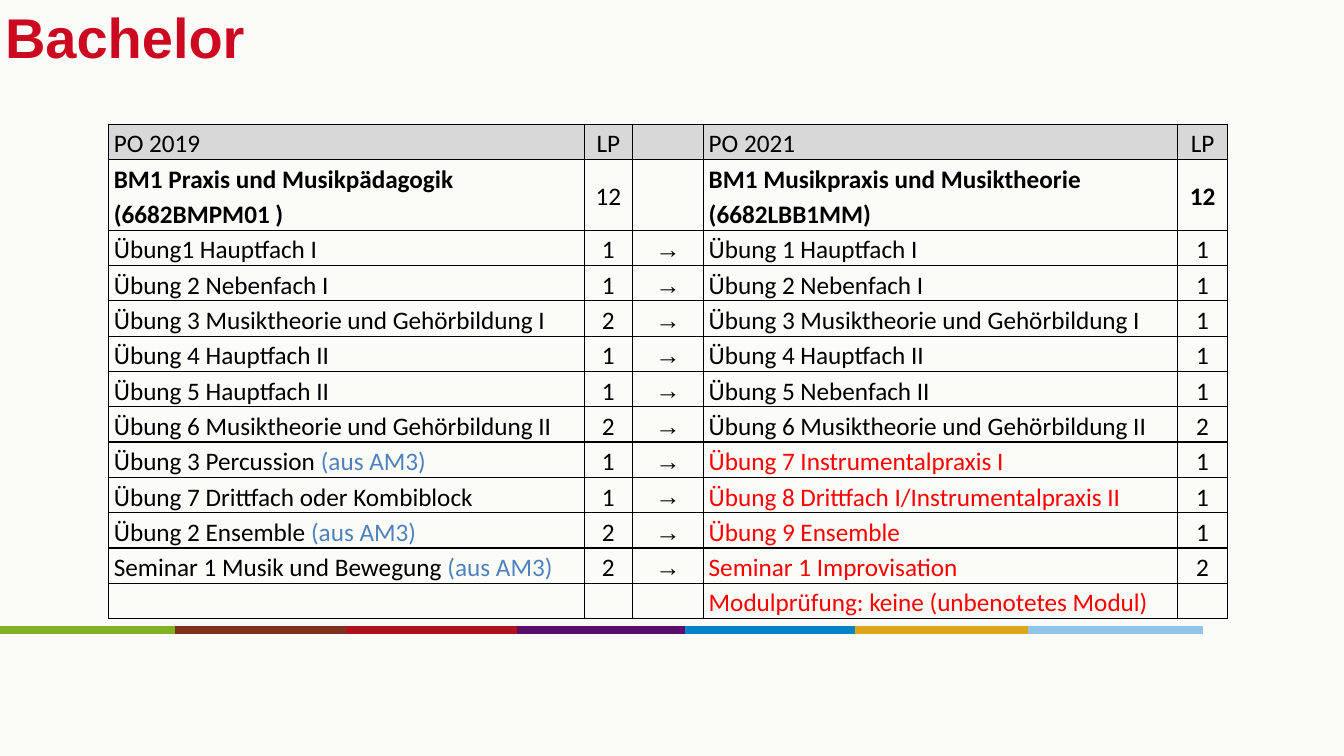
from typing import NamedTuple

from lxml.etree import SubElement
from pptx import Presentation
from pptx.dml.color import RGBColor
from pptx.enum.shapes import MSO_CONNECTOR
from pptx.enum.text import MSO_ANCHOR, PP_ALIGN
from pptx.oxml.ns import qn
from pptx.util import Cm, Pt

COLORS = {
    "background": "FBFCF8", "title": "CD0921", "text": "000000",
    "header": "D8D8D8", "changed": "FF0000", "origin": "4F81BD",
    "green": "83AF23", "brown": "7D321D", "red": "AF111D", "purple": "590F68",
    "blue": "0082C6", "gold": "DBA619", "sky": "91C4EA",
}


class Stripe(NamedTuple):
    left: float
    color: str


class Course(NamedTuple):
    old: str
    old_points: str
    arrow: str
    new: str
    new_points: str
    origin: str = ""
    new_color: str = "text"


STRIPE_TOP, STRIPE_WIDTH = 15.88, 4.4
STRIPES = [
    Stripe(0, "green"), Stripe(4.42, "brown"), Stripe(8.71, "red"),
    Stripe(13.03, "purple"), Stripe(17.27, "blue"), Stripe(21.54, "gold"),
    Stripe(25.91, "sky"),
]

AM3 = "(aus AM3)"
COURSES = [
    Course("PO 2019", "LP", "", "PO 2021", "LP"),
    Course("BM1 Praxis und Musikpädagogik (6682BMPM01 )", "12", "",
           "BM1 Musikpraxis und Musiktheorie (6682LBB1MM)", "12"),
    Course("Übung1 Hauptfach I", "1", "→", "Übung 1 Hauptfach I", "1"),
    Course("Übung 2 Nebenfach I", "1", "→", "Übung 2 Nebenfach I", "1"),
    Course("Übung 3 Musiktheorie und Gehörbildung I", "2", "→",
           "Übung 3 Musiktheorie und Gehörbildung I", "1"),
    Course("Übung 4 Hauptfach II", "1", "→", "Übung 4 Hauptfach II", "1"),
    Course("Übung 5 Hauptfach II", "1", "→", "Übung 5 Nebenfach II", "1"),
    Course("Übung 6 Musiktheorie und Gehörbildung II", "2", "→",
           "Übung 6 Musiktheorie und Gehörbildung II", "2"),
    Course("Übung 3 Percussion ", "1", "→",
           "Übung 7 Instrumentalpraxis I", "1", AM3, "changed"),
    Course("Übung 7 Drittfach oder Kombiblock", "1", "→",
           "Übung 8 Drittfach I/Instrumentalpraxis II", "1", "", "changed"),
    Course("Übung 2 Ensemble ", "2", "→", "Übung 9 Ensemble", "1", AM3, "changed"),
    Course("Seminar 1 Musik und Bewegung ", "2", "→",
           "Seminar 1 Improvisation", "2", AM3, "changed"),
    Course("", "", "", "Modulprüfung: keine (unbenotetes Modul)", "", "", "changed"),
]
HEADER_ROW, MODULE_ROW = 0, 1
OLD, OLD_POINTS, ARROW, NEW, NEW_POINTS = range(5)
COLUMN_WIDTHS = [11.99, 1.2, 1.8, 11.94, 1.27]
ROW_HEIGHT = 0.89


def rgb(name: str) -> RGBColor:
    return RGBColor.from_string(COLORS[name])


def style_font(font, face: str, size: float, color: str, bold: bool = False) -> None:
    font.name, font.size, font.bold = face, Pt(size), bold
    font.color.rgb = rgb(color)


def draw_stripe(slide, stripe: Stripe) -> None:
    line = slide.shapes.add_connector(
        MSO_CONNECTOR.STRAIGHT, Cm(stripe.left), Cm(STRIPE_TOP),
        Cm(stripe.left + STRIPE_WIDTH), Cm(STRIPE_TOP))
    line.line.color.rgb = rgb(stripe.color)
    line.line.width = Pt(5.5)
    SubElement(line.element.spPr, qn("a:effectLst"))


def draw_title(slide, wording: str) -> None:
    title = slide.shapes.add_textbox(Cm(0), Cm(-0.69), Cm(28.78), Cm(3.18))
    frame = title.text_frame
    frame.word_wrap = True
    frame.vertical_anchor = MSO_ANCHOR.MIDDLE
    frame.margin_left = frame.margin_right = Cm(0.13)
    frame.margin_top = frame.margin_bottom = Cm(0.13)
    frame.text = wording
    style_font(frame.paragraphs[0].font, "Arial", 40, "title", True)


def add_borders(cell) -> None:
    properties = cell._tc.get_or_add_tcPr()
    for side in ("lnL", "lnR", "lnT", "lnB"):
        border = SubElement(properties, qn(f"a:{side}"), w=str(Pt(1)))
        fill = SubElement(border, qn("a:solidFill"))
        SubElement(fill, qn("a:srgbClr"), val=COLORS["text"])


def fill_cell(cell, course: Course, row: int, column: int) -> None:
    add_borders(cell)
    if row == HEADER_ROW:
        cell.fill.solid()
        cell.fill.fore_color.rgb = rgb("header")
    else:
        cell.fill.background()
    cell.vertical_anchor = MSO_ANCHOR.MIDDLE
    cell.margin_left = cell.margin_right = Cm(0.13)
    cell.margin_top = cell.margin_bottom = Cm(0)

    paragraph = cell.text_frame.paragraphs[0]
    paragraph.line_spacing = 1.15
    if column not in (OLD, NEW):
        paragraph.alignment = PP_ALIGN.CENTER
    style_font(paragraph.font, "Arial" if column == ARROW else "Calibri", 18,
               course.new_color if column == NEW else "text",
               row == MODULE_ROW and column != OLD_POINTS)
    if course[column]:
        paragraph.add_run().text = course[column]
    if column == OLD and course.origin:
        origin = paragraph.add_run()
        origin.text = course.origin
        origin.font.color.rgb = rgb("origin")


def draw_courses(slide, courses: list[Course]) -> None:
    table = slide.shapes.add_table(
        len(courses), len(COLUMN_WIDTHS), Cm(2.74), Cm(3.13),
        Cm(sum(COLUMN_WIDTHS)), Cm(ROW_HEIGHT * (len(courses) + 1))).table
    table.first_row = table.horz_banding = False
    for column, width in enumerate(COLUMN_WIDTHS):
        table.columns[column].width = Cm(width)
    for row, course in enumerate(courses):
        table.rows[row].height = Cm(ROW_HEIGHT * (2 if row == MODULE_ROW else 1))
        for column in range(len(COLUMN_WIDTHS)):
            fill_cell(table.cell(row, column), course, row, column)


def main() -> None:
    presentation = Presentation()
    presentation.slide_width, presentation.slide_height = Cm(33.87), Cm(19.05)
    slide = presentation.slides.add_slide(presentation.slide_layouts[6])
    slide.background.fill.solid()
    slide.background.fill.fore_color.rgb = rgb("background")

    # Coloured band
    for stripe in STRIPES:
        draw_stripe(slide, stripe)

    # Title and course comparison
    draw_title(slide, "Bachelor")
    draw_courses(slide, COURSES)
    presentation.save("out.pptx")


if __name__ == "__main__":
    main()
